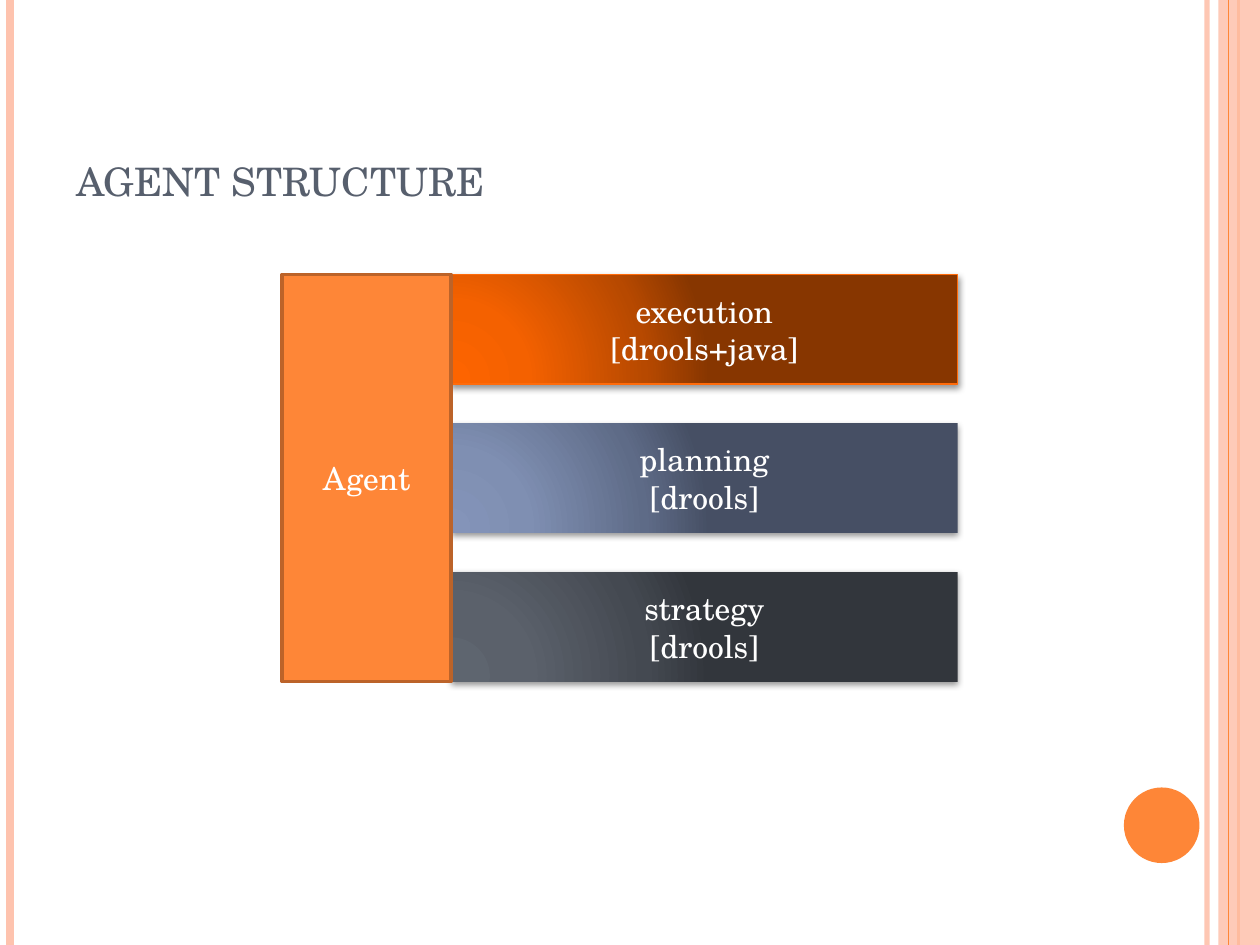
from pptx import Presentation
from pptx.dml.color import RGBColor
from pptx.enum.shapes import MSO_CONNECTOR, MSO_SHAPE
from pptx.enum.text import MSO_ANCHOR, PP_ALIGN
from pptx.oxml import parse_xml
from pptx.oxml.ns import nsdecls, qn
from pptx.util import Inches, Pt
from lxml.etree import SubElement

FONT = "TeX Gyre Schola"
COLORS = {"pink": "FEC3AE", "orange": "FE8637", "rust": "BC6329",
          "flame": "FF6B0A", "slate": "575F6D", "white": "FFFFFF"}

TITLE = "agent structure"
AGENT = "Agent"
# text lines, gradient colours, outline
LAYERS = [
    (["execution", "[drools+java]"], ["FD6400", "F46100", "B74900", "873600"], "flame"),
    (["planning", "[drools]"], ["8494B9", "7F8FB2", "5E6B87", "464F64"], None),
    (["strategy", "[drools]"], ["5E656F", "5B616B", "444951", "32363C"], None),
]
STOPS = [0, 30, 75, 100]
# x, colour, width in points, opacity
RULES = [(9.58, "pink", 3, 93), (0.08, "pink", 4.5, 100), (9.83, "orange", 1.5, 100)]
THIN = (9.75, "orange", 0.75, 100)

WIDE, HIGH = 10, 7.5
LEFT, TOP, SIDE = 2.24, 2.18, 1.34
BAR_W, BAR_H, STEP = 4.02, 0.87, 1.18

deck = Presentation()
deck.slide_width, deck.slide_height = Inches(WIDE), Inches(HIGH)
slide = deck.slides.add_slide(deck.slide_layouts[6])


def rgb(name):
    return RGBColor.from_string(COLORS[name])


def fade(fill, pct):
    """Set the opacity of a solid fill in percent."""
    color = fill._xPr.find(qn("a:solidFill"))[0]
    SubElement(color, qn("a:alpha"), val=str(pct * 1000))


def add_rule(x, color, width, pct):
    rule = slide.shapes.add_connector(
        MSO_CONNECTOR.STRAIGHT, Inches(x), Inches(0), Inches(x), Inches(HIGH))
    rule.line.color.rgb = rgb(color)
    rule.line.width = Pt(width)
    if pct < 100:
        fade(rule.line.fill, pct)
    SubElement(rule._element.spPr, qn("a:effectLst"))


def add_shape(kind, box, fill=None, line=None, width=1):
    shape = slide.shapes.add_shape(kind, *map(Inches, box))
    shape.shadow.inherit = False
    if fill:
        shape.fill.solid()
        shape.fill.fore_color.rgb = rgb(fill)
    if line:
        shape.line.color.rgb = rgb(line)
        shape.line.width = Pt(width)
    else:
        shape.line.fill.background()
    return shape


def write(shape, lines, anchor=MSO_ANCHOR.MIDDLE, align=PP_ALIGN.CENTER,
          size=18, color="white"):
    frame = shape.text_frame
    frame.word_wrap = True
    frame.vertical_anchor = anchor
    frame.text = "\n".join(lines)
    for para in frame.paragraphs:
        para.alignment = align
        font = para.runs[0].font
        for key, value in {"name": FONT, "size": Pt(size)}.items():
            setattr(font, key, value)
        font.color.rgb = rgb(color)


def shade(shape, colors):
    """Give a bar its radial gradient and soft shadow."""
    stops = "".join(
        f'<a:gs pos="{pos * 1000}"><a:srgbClr val="{color}"/></a:gs>'
        for pos, color in zip(STOPS, colors))
    grad = parse_xml(
        f'<a:gradFill {nsdecls("a")} rotWithShape="1"><a:gsLst>{stops}</a:gsLst>'
        '<a:path path="circle"><a:fillToRect l="5000" t="100000" r="120000" '
        'b="10000"/></a:path></a:gradFill>')
    props = shape._element.spPr
    props.find(qn("a:prstGeom")).addnext(grad)
    props.find(qn("a:effectLst")).append(parse_xml(
        f'<a:outerShdw {nsdecls("a")} blurRad="{Pt(4)}" dist="{Pt(1.6)}" '
        'dir="5400000" rotWithShape="0"><a:srgbClr val="000000">'
        '<a:alpha val="42000"/></a:srgbClr></a:outerShdw>'))


for rule in RULES:
    add_rule(*rule)
band = add_shape(MSO_SHAPE.RECTANGLE, (9.67, 0, 0.33, HIGH), "pink")
fade(band.fill, 87)
add_rule(*THIN)
add_shape(MSO_SHAPE.OVAL, (8.92, 6.25, 0.6, 0.6), "orange")

title = slide.shapes.add_textbox(*map(Inches, (0.51, 0.44, 8.17, 1.25)))
write(title, [TITLE], MSO_ANCHOR.BOTTOM, PP_ALIGN.LEFT, 28, "slate")
title.text_frame.paragraphs[0].runs[0].font._element.set("cap", "small")

for row, (lines, colors, edge) in reversed(list(enumerate(LAYERS))):
    bar = add_shape(MSO_SHAPE.RECTANGLE,
                    (LEFT + SIDE, TOP + row * STEP, BAR_W, BAR_H), line=edge)
    shade(bar, colors)
    write(bar, lines)

tall = STEP * (len(LAYERS) - 1) + BAR_H
agent = add_shape(MSO_SHAPE.RECTANGLE, (LEFT, TOP, SIDE, tall), "orange", "rust", 2)
write(agent, [AGENT])

deck.save("out.pptx")
